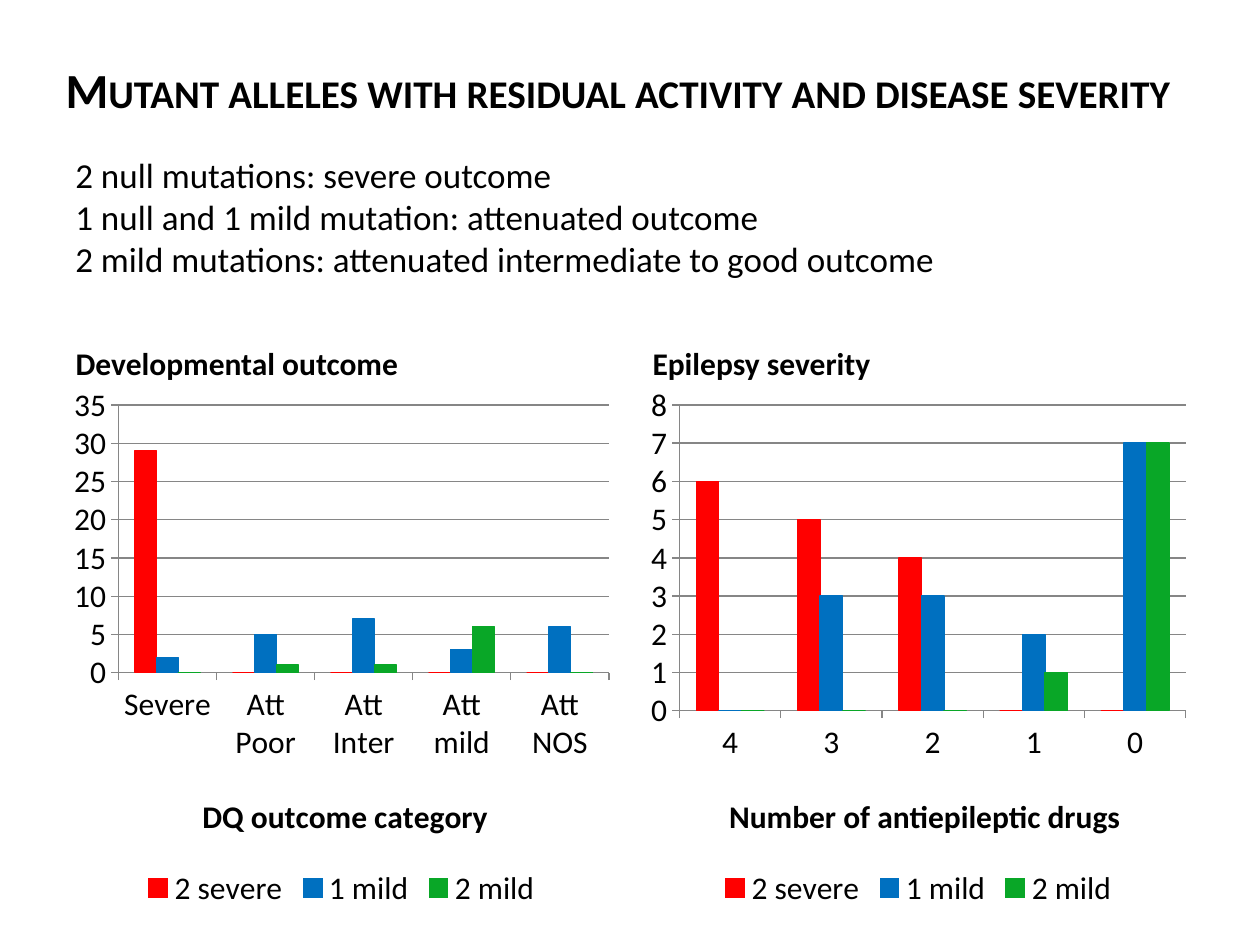
from lxml.etree import SubElement
from pptx import Presentation
from pptx.chart.data import CategoryChartData
from pptx.dml.color import RGBColor
from pptx.enum.chart import XL_CHART_TYPE as ChartType, XL_LEGEND_POSITION as LegendPosition
from pptx.enum.chart import XL_TICK_MARK as TickMark
from pptx.enum.text import MSO_ANCHOR as Anchor, MSO_AUTO_SIZE as AutoSize, PP_ALIGN as Align
from pptx.oxml.ns import qn
from pptx.util import Cm, Pt

FONT = "Calibri"
COLORS = {
    "text": "000000",
    "grid": "868686",
    "2 severe": "FF0000",
    "1 mild": "0070C0",
    "2 mild": "09A727",
}
FINDINGS = [
    "2 null mutations: severe outcome",
    "1 null and 1 mild mutation: attenuated outcome",
    "2 mild mutations: attenuated intermediate to good outcome",
]
DEVELOPMENT = {
    "heading": "Developmental outcome",
    "axis": "DQ outcome category",
    "axis_left": 0.24,
    "categories": ["Severe", "Att Poor", "Att Inter", "Att mild", "Att NOS"],
    "counts": {"2 severe": [29, 0, 0, 0, 0], "1 mild": [2, 5, 7, 3, 6], "2 mild": [0, 1, 1, 6, 0]},
}
EPILEPSY = {
    "heading": "Epilepsy severity",
    "axis": "Number of antiepileptic drugs",
    "axis_left": 0.15,
    "categories": ["4", "3", "2", "1", "0"],
    "counts": {"2 severe": [6, 5, 4, 0, 0], "1 mild": [0, 3, 3, 2, 7], "2 mild": [0, 0, 0, 1, 7]},
}


def color(name):
    return RGBColor.from_string(COLORS[name])


def style_font(font, size, bold=False):
    font.name, font.size, font.bold = FONT, Pt(size), bold
    font.color.rgb = color("text")


def move(shape, left, top, width, height):
    shape.left, shape.top, shape.width, shape.height = left, top, width, height


def style_text(shape, size, anchor, bold=False, line_spacing=None):
    frame = shape.text_frame
    frame.word_wrap = True
    frame.auto_size = AutoSize.NONE
    frame.vertical_anchor = anchor
    for paragraph in frame.paragraphs:
        paragraph.alignment = Align.LEFT
        paragraph.line_spacing = line_spacing
        for run in paragraph.runs:
            style_font(run.font, size, bold)


def place_in_chart(part, index, **fractions):
    """Give a chart part a manual layout, in fractions of the chart area."""
    for old in part.findall(qn("c:layout")):
        part.remove(old)
    layout = SubElement(part, qn("c:layout"))
    part.insert(index, layout)
    manual = SubElement(layout, qn("c:manualLayout"))
    for mode in ("xMode", "yMode"):
        SubElement(manual, qn(f"c:{mode}"), val="edge")
    for side, fraction in fractions.items():
        SubElement(manual, qn(f"c:{side}"), val=str(fraction))


def add_title(title, left, top, width, height):
    move(title, left, top, width, height)
    title.text_frame.text = "Mutant alleles with residual activity and disease severity"
    style_text(title, 28, Anchor.MIDDLE, bold=True, line_spacing=0.9)
    title.text_frame.paragraphs[0].runs[0].font._element.set("cap", "small")


def add_findings(slide, left, top, width, height):
    findings = slide.shapes.add_textbox(left, top, width, height)
    findings.text_frame.text = "\n".join(FINDINGS)
    style_text(findings, 20, Anchor.TOP)


def add_outcome_chart(slide, outcome, left, top, width, height):
    data = CategoryChartData()
    data.categories = outcome["categories"]
    for name, counts in outcome["counts"].items():
        data.add_series(name, counts)
    chart = slide.shapes.add_chart(
        ChartType.COLUMN_CLUSTERED, left, top, width, height, data).chart
    style_font(chart.font, 18)
    chart.has_title = False
    chart.has_legend = True
    chart.legend.position = LegendPosition.BOTTOM
    chart.legend.include_in_layout = False

    plot = chart.plots[0]
    plot.gap_width, plot.overlap, plot.vary_by_categories = 150, 0, False
    for series in plot.series:
        series.format.fill.solid()
        series.format.fill.fore_color.rgb = color(series.name)
        series.format.line.color.rgb = color(series.name)
        series.format.line.width = Pt(0.75)

    categories, values = chart.category_axis, chart.value_axis
    values.has_major_gridlines = True
    for line in (categories.format.line, values.format.line, values.major_gridlines.format.line):
        line.color.rgb = color("grid")
        line.width = Pt(0.75)
    for axis in (categories, values):
        axis.major_tick_mark, axis.minor_tick_mark = TickMark.OUTSIDE, TickMark.NONE

    axis_title = categories.axis_title
    axis_title.text_frame.text = outcome["axis"]
    style_font(axis_title.text_frame.paragraphs[0].runs[0].font, 18, bold=True)
    place_in_chart(axis_title.element, 1, x=outcome["axis_left"], y=0.77)
    plot_area = chart.element.find(f".//{qn('c:plotArea')}")
    place_in_chart(plot_area, 0, x=0.02, y=0.03, w=0.96, h=0.69)


def add_outcome(slide, heading, outcome, left, top, width, height):
    """Place a heading with its chart below, slightly overlapping the heading box."""
    move(heading, left, top, width, Cm(1.78))
    heading.text_frame.text = outcome["heading"]
    style_text(heading, 18, Anchor.BOTTOM, bold=True, line_spacing=0.9)
    heading.text_frame.paragraphs[0].space_before = Pt(7.5)
    chart_offset = Cm(1.4)
    add_outcome_chart(slide, outcome, left, top + chart_offset, width, height - chart_offset)


def main():
    presentation = Presentation()
    presentation.slide_width, presentation.slide_height = Cm(25.4), Cm(19.05)
    slide = presentation.slides.add_slide(presentation.slide_layouts.get_by_name("Comparison"))
    title, left_heading, left_content, right_heading, right_content = slide.placeholders
    for content in (left_content, right_content):
        content.element.getparent().remove(content.element)

    margin, column = Cm(1.27), Cm(11.23)
    add_title(title, Cm(1.07), Cm(0.76), Cm(23.29), Cm(2.21))
    for heading, outcome, left in (
        (left_heading, DEVELOPMENT, margin),
        (right_heading, EPILEPSY, presentation.slide_width - margin - column),
    ):
        add_outcome(slide, heading, outcome, left, Cm(6.05), column, Cm(12.37))
    add_findings(slide, margin, Cm(2.97), Cm(19.69), Cm(3.68))
    presentation.save("out.pptx")


if __name__ == "__main__":
    main()
